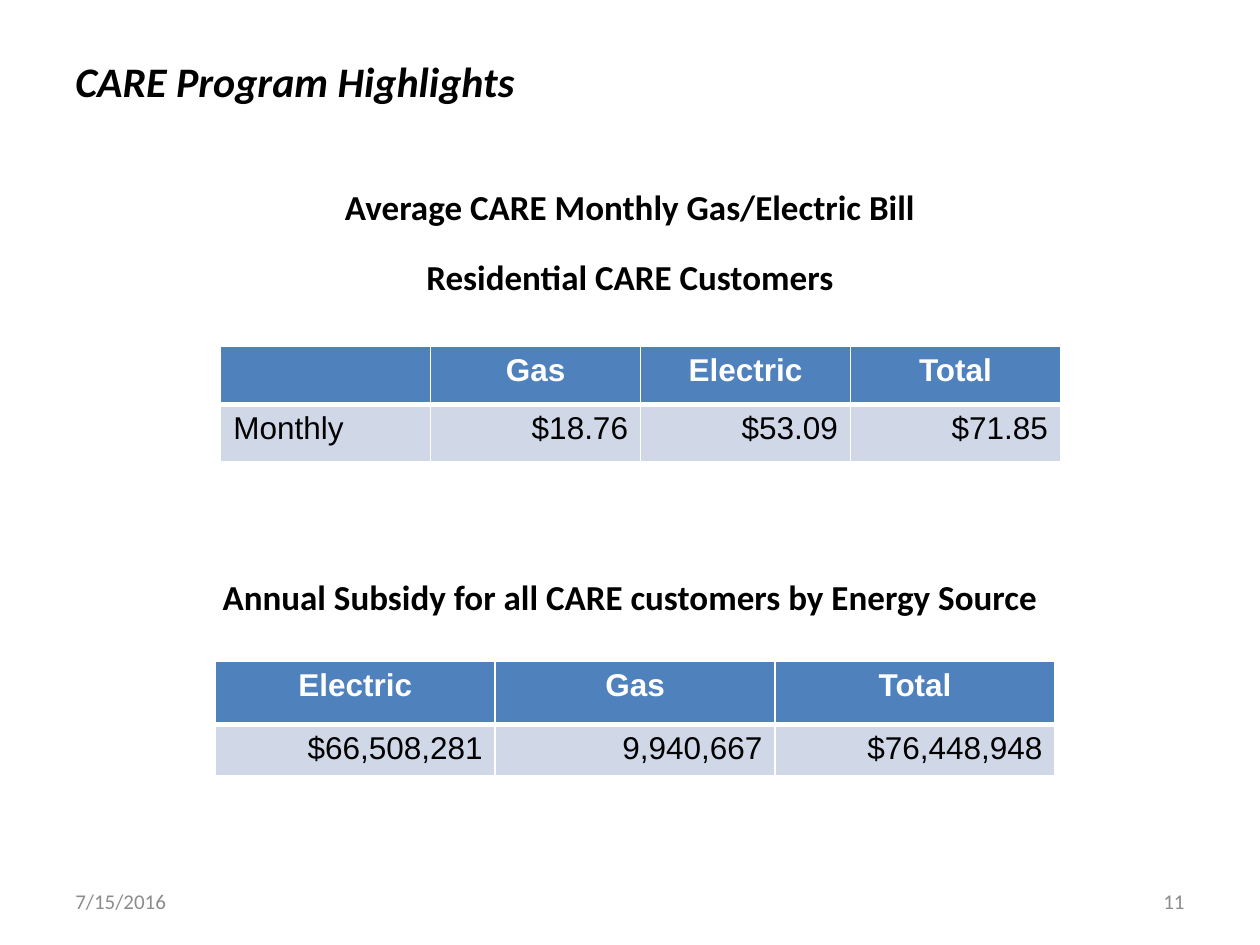
from lxml import etree
from pptx import Presentation
from pptx import util as u
from pptx.dml.color import RGBColor
from pptx.enum import text
from pptx.oxml import ns

BLACK = RGBColor(0x00, 0x00, 0x00)
WHITE = RGBColor(0xFF, 0xFF, 0xFF)
GREY = RGBColor(0x8C, 0x8C, 0x8C)
HEADER_BLUE = RGBColor(0x4F, 0x81, 0xBD)
ROW_BLUE = RGBColor(0xD0, 0xD8, 0xE8)
LEFT, CENTER, RIGHT = text.PP_ALIGN.LEFT, text.PP_ALIGN.CENTER, text.PP_ALIGN.RIGHT


def style_spans(para, font_name, size, color, bold=False, italic=False):
    """Format every run of a paragraph."""
    for span in para.runs:
        font = span.font
        font.name, font.size = font_name, u.Pt(size)
        font.bold, font.italic = bold, italic
        font.color.rgb = color


def add_text(page, left, top, width, height, content, size, color,
             align=LEFT, anchor=text.MSO_ANCHOR.MIDDLE, bold=False, italic=False):
    """Place a wrapped Calibri text box and return its paragraphs."""
    box = page.shapes.add_textbox(u.Cm(left), u.Cm(top), u.Cm(width), u.Cm(height))
    frame = box.text_frame
    frame.word_wrap = True
    frame.vertical_anchor = anchor
    frame.text = content
    for para in frame.paragraphs:
        para.alignment = align
        style_spans(para, "Calibri", size, color, bold, italic)
    return frame.paragraphs


def add_headings(page, left, top, width, height):
    """Place the centred headings that introduce the two tables."""
    headings = "\n".join([
        "Average CARE Monthly Gas/Electric Bill",
        "Residential CARE Customers",
        "Annual Subsidy for all CARE customers by Energy Source",
    ])
    paras = add_text(page, left, top, width, height, headings, 20, BLACK,
                     CENTER, text.MSO_ANCHOR.TOP, bold=True)
    for para, before in zip(paras, (0, 4, 147)):
        para.space_before = u.Pt(before)
        para.space_after = u.Pt(12)


def set_borders(cell, widths):
    """Draw white cell borders with a width in points for each side."""
    properties = cell._tc.get_or_add_tcPr()
    for side, width in widths.items():
        line = etree.SubElement(properties, ns.qn(f"a:ln{side}"), w=str(u.Pt(width)))
        fill = etree.SubElement(line, ns.qn("a:solidFill"))
        etree.SubElement(fill, ns.qn("a:srgbClr"), val=str(WHITE))


def add_figures(page, left, top, width, row_heights, rows):
    """Place a table with a blue header row and right-aligned amounts."""
    columns = len(rows[0])
    frame = page.shapes.add_table(len(rows), columns, u.Cm(left), u.Cm(top),
                                  u.Cm(width), u.Cm(sum(row_heights)))
    table = frame.table
    for column in table.columns:
        column.width = u.Cm(width / columns)
    for r, (height, values) in enumerate(zip(row_heights, rows)):
        table.rows[r].height = u.Cm(height)
        header = r == 0
        for c, value in enumerate(values):
            cell = table.cell(r, c)
            set_borders(cell, {"L": 1, "R": 1, "T": 1 if header else 3,
                               "B": 3 if header else 1})
            cell.fill.solid()
            cell.fill.fore_color.rgb = HEADER_BLUE if header else ROW_BLUE
            cell.text_frame.text = value
            para = cell.text_frame.paragraphs[0]
            amount_align = LEFT if value.isalpha() else RIGHT
            para.alignment = CENTER if header else amount_align
            style_spans(para, "Arial", 18, WHITE if header else BLACK, bold=header)


def add_footer(page, left, top, width, height):
    """Place the date and the page number at the two ends of the footer."""
    part = 5.92
    add_text(page, left, top, part, height, "7/15/2016", 12, GREY)
    add_text(page, left + width - part, top, part, height, "11", 12, GREY, RIGHT)


def main():
    """Build and save the deck."""
    deck = Presentation()
    deck.slide_width, deck.slide_height = u.Cm(25.4), u.Cm(19.05)
    page = deck.slides.add_slide(deck.slide_layouts[6])
    add_text(page, 1.27, 0.84, 16.51, 1.57, "CARE Program Highlights", 24, BLACK,
             bold=True, italic=True)
    add_headings(page, 1.27, 3.61, 22.86, 13.41)
    add_footer(page, 1.27, 17.65, 22.86, 1.02)
    add_figures(page, 4.45, 6.99, 16.93, (1.17, 1.15), [
        ("", "Gas", "Electric", "Total"),
        ("Monthly", "$18.76", "$53.09", "$71.85"),
    ])
    add_figures(page, 4.34, 13.34, 16.93, (1.27, 1.03), [
        ("Electric", "Gas", "Total"),
        ("$66,508,281", "9,940,667", "$76,448,948"),
    ])
    deck.save("out.pptx")


if __name__ == "__main__":
    main()
